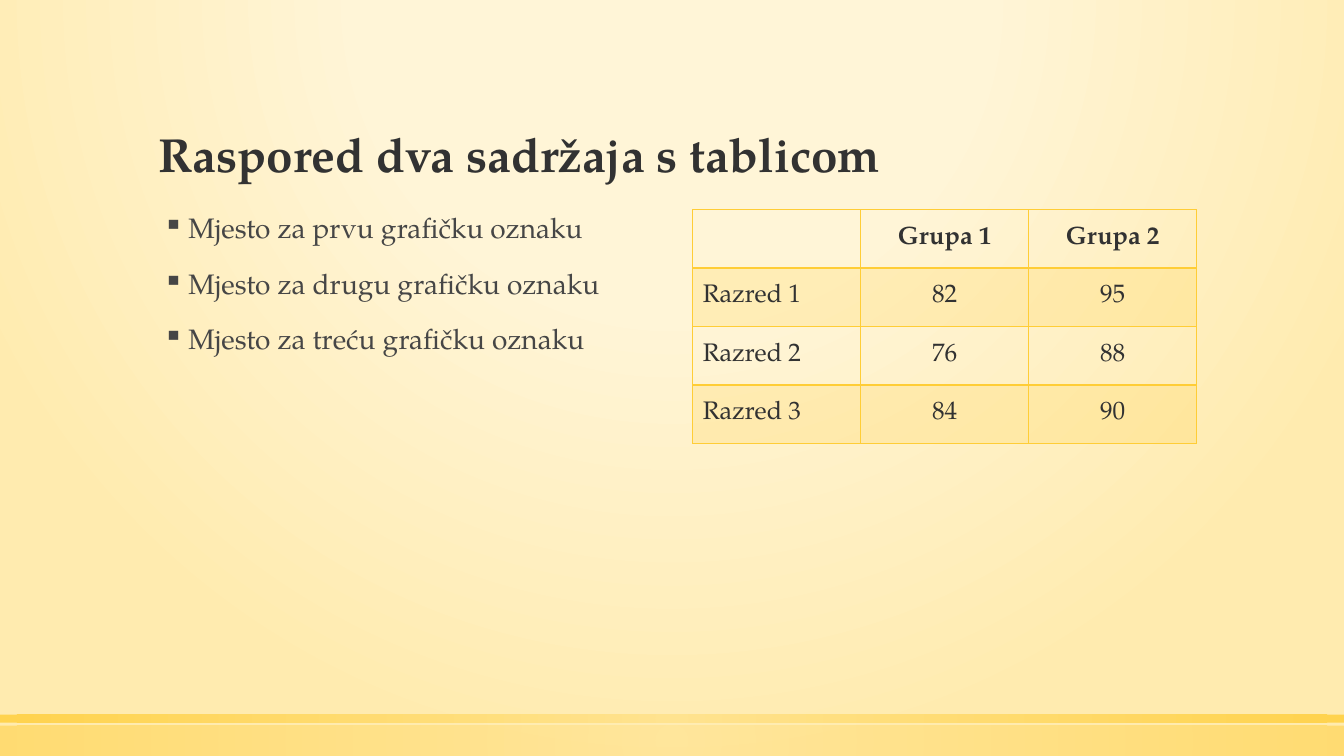
from lxml import etree
from pptx import Presentation
from pptx.dml.color import RGBColor
from pptx.enum import shapes, text
from pptx.oxml.ns import qn
from pptx.util import Inches, Pt

# Content
TITLE = "Raspored dva sadržaja s tablicom"
BULLETS = [
    "Mjesto za prvu grafičku oznaku",
    "Mjesto za drugu grafičku oznaku",
    "Mjesto za treću grafičku oznaku",
]
TABLE = [
    ["", "Grupa 1", "Grupa 2"],
    ["Razred 1", "82", "95"],
    ["Razred 2", "76", "88"],
    ["Razred 3", "84", "90"],
]

THEME = {
    "font": "TeX Gyre Pagella",
    "dark": "323232", "body": "464646", "gold": "FFCD36",
    "light_gold": "FFE186", "cream": "FFF5D7", "sand": "FFEBAF",
    "title_pt": 34, "body_pt": 20, "table_pt": 18,
}

# Layout in inches
WIDTH, HEIGHT = 13.33, 7.5
LEFT, TOP, COLUMN = 1.47, 2.08, 5
TABLE_LEFT, ROW = 6.87, 0.58
STRIPS = [(7.2, 0.3, 50), (7.09, 0.08, 80)]  # top, height, opacity


def add(parent, tag, **attrs):
    return etree.SubElement(parent, qn(tag), {k: str(v) for k, v in attrs.items()})


def add_color(parent, color, opacity=100):
    clr = add(parent, "a:srgbClr", val=color)
    if opacity < 100:
        add(clr, "a:alpha", val=opacity * 1000)


def radial(fill, owner, stops, top=50, bottom=50):
    fill.gradient()
    grad = owner.find(".//" + qn("a:gradFill"))
    grad.clear()
    stop_list = add(grad, "a:gsLst")
    for pos, color, opacity in stops:
        add_color(add(stop_list, "a:gs", pos=pos * 1000), color, opacity)
    path = add(grad, "a:path", path="circle")
    add(path, "a:fillToRect", l=50000, t=top * 1000, r=50000, b=bottom * 1000)


def style(p, size, color, bold=False):
    p.font.name = THEME["font"]
    p.font.size = Pt(size)
    p.font.bold = bold
    p.font.color.rgb = RGBColor.from_string(color)


def add_text(slide, box, lines, size, color, bold=False):
    tf = slide.shapes.add_textbox(*map(Inches, box)).text_frame
    tf.word_wrap = True
    tf.text = "\n".join(lines)
    for p in tf.paragraphs:
        style(p, size, color, bold)
        p.line_spacing = 0.9
    return tf


def add_bullet(p):
    p.space_before = Pt(18)
    pr = p._p.get_or_add_pPr()
    pr.set("marL", str(Inches(0.3)))
    pr.set("indent", str(Inches(-0.25)))
    bullet = etree.Element(qn("a:buChar"), {"char": "▪"})
    pr.find(qn("a:defRPr")).addprevious(bullet)


def add_borders(cell, header):
    tc_pr = cell._tc.get_or_add_tcPr()
    for side in "LRTB":
        points = 2 if header and side == "B" else 1
        ln = add(tc_pr, f"a:ln{side}", w=Pt(points))
        add_color(add(ln, "a:solidFill"), THEME["gold"])


def fill_cell(cell, row, col, value):
    header = row == 0
    add_borders(cell, header)
    if row % 2:
        cell.fill.solid()
        cell.fill.fore_color.rgb = RGBColor.from_string(THEME["gold"])
        clr = cell._tc.tcPr.find(qn("a:solidFill") + "/" + qn("a:srgbClr"))
        add(clr, "a:alpha", val=20000)
    else:
        cell.fill.background()
    cell.vertical_anchor = text.MSO_ANCHOR.MIDDLE
    cell.text = value
    p = cell.text_frame.paragraphs[0]
    style(p, THEME["table_pt"], THEME["dark"], header)
    p.alignment = text.PP_ALIGN.CENTER if col else text.PP_ALIGN.LEFT


def main():
    prs = Presentation()
    prs.slide_width, prs.slide_height = Inches(WIDTH), Inches(HEIGHT)
    slide = prs.slides.add_slide(prs.slide_layouts[6])

    # Background and bottom strips
    radial(slide.background.fill, slide._element,
           [(0, THEME["cream"], 59), (40, THEME["cream"], 66),
            (100, THEME["sand"], 100)], top=-80, bottom=180)
    for top, height, opacity in STRIPS:
        sp = slide.shapes.add_shape(
            shapes.MSO_SHAPE.RECTANGLE, 0, Inches(top), Inches(WIDTH), Inches(height))
        sp.shadow.inherit = False
        sp.line.fill.background()
        radial(sp.fill, sp._element,
               [(0, THEME["light_gold"], opacity), (100, THEME["gold"], opacity)])

    # Title and bullets
    tf = add_text(slide, (LEFT, 0.51, 10.4, 1.35), [TITLE],
                  THEME["title_pt"], THEME["dark"], True)
    tf.vertical_anchor = text.MSO_ANCHOR.BOTTOM
    tf = add_text(slide, (LEFT, TOP, COLUMN, 4.51), BULLETS,
                  THEME["body_pt"], THEME["body"])
    for p in tf.paragraphs:
        add_bullet(p)

    # Table
    rows, cols = len(TABLE), len(TABLE[0])
    table = slide.shapes.add_table(
        rows, cols, Inches(TABLE_LEFT), Inches(TOP),
        Inches(COLUMN), Inches(ROW * rows)).table
    for r, values in enumerate(TABLE):
        for c, value in enumerate(values):
            fill_cell(table.cell(r, c), r, c, value)

    prs.save("out.pptx")


if __name__ == "__main__":
    main()
